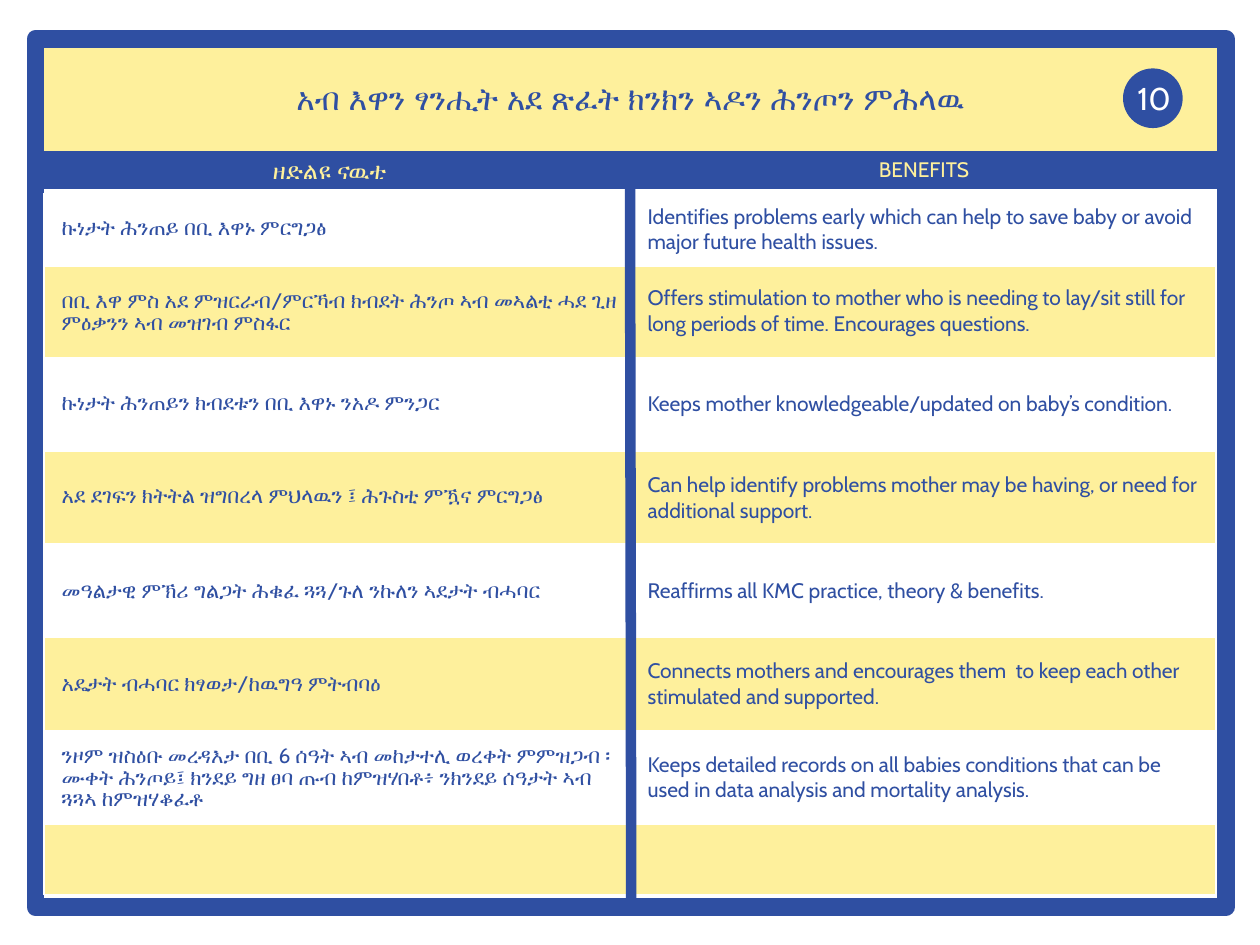
from lxml.etree import SubElement
from pptx import Presentation
from pptx.dml.color import RGBColor
from pptx.enum.shapes import MSO_CONNECTOR, MSO_SHAPE
from pptx.enum.text import MSO_ANCHOR, PP_ALIGN
from pptx.oxml import parse_xml
from pptx.oxml.ns import nsdecls, qn
from pptx.util import Inches, Pt

# Content
TITLE = "አብ እዋን ፃንሒት አደ ጽፈት ክንክን ኣዶን ሕንጦን ምሕላዉ"
NUMBER = "10"
HEADS = ("ዘድልዩ ናዉቲ", "BENEFITS")
ROWS = [
    ("ኩነታት ሕንጠይ በቢ እዋኑ ምርግጋፅ",
     "Identifies problems early which can help to save baby or avoid major future health issues."),
    ("በቢ እዋ ምስ አደ ምዝርራብ/ምርኻብ ክብደት ሕንጦ ኣብ መኣልቲ ሓደ ጊዘ ምዕቃንን ኣብ መዝገብ ምስፋር",
     "Offers stimulation to mother who is needing to lay/sit still for long periods of time. "
     "Encourages questions."),
    ("ኩነታት ሕንጠይን ክብደቱን በቢ እዋኑ ንአዶ ምንጋር",
     "Keeps mother knowledgeable/updated on baby’s condition."),
    ("አደ ደገፍን ክትትል ዝግበረላ ምህላዉን ፤ ሕጉስቲ ምዃና ምርግጋፅ",
     "Can help identify problems mother may be having, or need for additional support."),
    ("መዓልታዊ ምኽሪ ግልጋት ሕቁፈ ጓጓ/ጉለ ንኩለን ኣደታት ብሓባር",
     "Reaffirms all KMC practice, theory & benefits."),
    ("አዴታት ብሓባር ክፃወታ/ከዉግዓ ምትብባዕ",
     "Connects mothers and encourages them  to keep each other stimulated and supported."),
    ("ንዞም ዝስዕቡ መረዳእታ በቢ 6 ሰዓት ኣብ መከታተሊ ወረቀት ምምዝጋብ ፡ ሙቀት ሕንጦይ፤ ክንደይ ግዘ ፀባ ጡብ ከምዝሃበቶ፥ "
     "ንክንደይ ሰዓታት ኣብ ጓጓኣ ከምዝሃቆፈቶ",
     "Keeps detailed records on all babies conditions that can be used in data analysis "
     "and mortality analysis."),
    ("", ""),
]

THEME = {"font": "Cabin", "blue": "2F4FA2", "cream": "FEF09C", "white": "FFFFFF",
         "title": 18, "head": (14, 12), "body": 12}
LEFT, TOP, WIDE = 0.28, 0.31, 9.45
RULE_Y, MID_X = 1.46, 5
END_ROW, MID_ROW = 0.56, 0.74

deck = Presentation()
deck.slide_width, deck.slide_height = Inches(10), Inches(7.5)
slide = deck.slides.add_slide(deck.slide_layouts[6])
shapes = slide.shapes


def tint(name):
    return RGBColor.from_string(THEME[name])


def write(frame, text, size, color, align=PP_ALIGN.LEFT, bold=False):
    frame.text = text
    for par in frame.paragraphs:
        par.alignment = align
        for run in par.runs:
            font = run.font
            font.name, font.size, font.bold = THEME["font"], Pt(size), bold
            font.color.rgb = tint(color)


def shape(kind, box, fill=None, line=None, width=1):
    item = shapes.add_shape(kind, *map(Inches, box))
    item.shadow.inherit = False
    if fill:
        item.fill.solid()
        item.fill.fore_color.rgb = tint(fill)
    else:
        item.fill.background()
    if line:
        item.line.color.rgb = tint(line)
        item.line.width = Pt(width)
    else:
        item.line.fill.background()


def label(box, text, size, color, bold=False, wrap=True, anchor=MSO_ANCHOR.TOP):
    frame = shapes.add_textbox(*map(Inches, box)).text_frame
    frame.word_wrap, frame.vertical_anchor = wrap, anchor
    write(frame, text, size, color, PP_ALIGN.CENTER, bold)


def rule(x1, y1, x2, y2):
    line = shapes.add_connector(MSO_CONNECTOR.STRAIGHT, *map(Inches, (x1, y1, x2, y2)))
    line.line.color.rgb = tint("blue")
    line.line.width = Pt(6)
    SubElement(line._element.spPr, qn("a:effectLst"))


def edges(cell, base):
    props = cell._tc.get_or_add_tcPr()
    for spot, (side, width) in enumerate((("L", 1), ("R", 1), ("T", 1), ("B", base))):
        props.insert(spot, parse_xml(
            f'<a:ln{side} {nsdecls("a")} w="{Pt(width)}"><a:solidFill>'
            f'<a:srgbClr val="{THEME["white"]}"/></a:solidFill></a:ln{side}>'))


# Title band, frame and heading band
shape(MSO_SHAPE.RECTANGLE, (LEFT, TOP, WIDE, 1.18), "cream")
shape(MSO_SHAPE.RECTANGLE, (LEFT, TOP, WIDE, 6.89), line="blue", width=10)
shape(MSO_SHAPE.RECTANGLE, (LEFT, 1.2, WIDE, 0.3), "blue")
for x, text, size in zip((LEFT, MID_X), HEADS, THEME["head"]):
    label((x, 1.19, 4.67, 0.32), text, size, "cream")

# Table with alternating row colours
highs = [END_ROW] + [MID_ROW] * (len(ROWS) - 2) + [END_ROW]
table = shapes.add_table(len(ROWS), 2, *map(Inches, (0.35, 1.54, 9.31, sum(highs)))).table
table.first_row = table.horz_banding = False
for col in table.columns:
    col.width = Inches(4.65)
for r, (row, high) in enumerate(zip(ROWS, highs)):
    table.rows[r].height = Inches(high)
    for c, text in enumerate(row):
        cell = table.cell(r, c)
        cell.vertical_anchor = MSO_ANCHOR.MIDDLE
        cell.margin_left, cell.margin_right = Inches(0.14), Inches(0.07)
        cell.margin_top = cell.margin_bottom = Inches(0.04)
        cell.fill.solid()
        cell.fill.fore_color.rgb = tint("cream" if r % 2 else "white")
        edges(cell, 1 if r else 3)
        write(cell.text_frame, text, THEME["body"], "blue")

# Divider, title, heading rule and number badge
rule(MID_X, RULE_Y, MID_X + 0.01, 7.15)
label((LEFT, 0.58, WIDE, 0.4), TITLE, THEME["title"], "blue", bold=True,
      anchor=MSO_ANCHOR.MIDDLE)
rule(LEFT, RULE_Y, 9.66, RULE_Y)
shape(MSO_SHAPE.OVAL, (8.92, 0.55, 0.46, 0.46), "blue", "blue")
label((8.92, 0.58, 0.48, 0.4), NUMBER, THEME["title"], "white", wrap=False)

deck.save("out.pptx")
